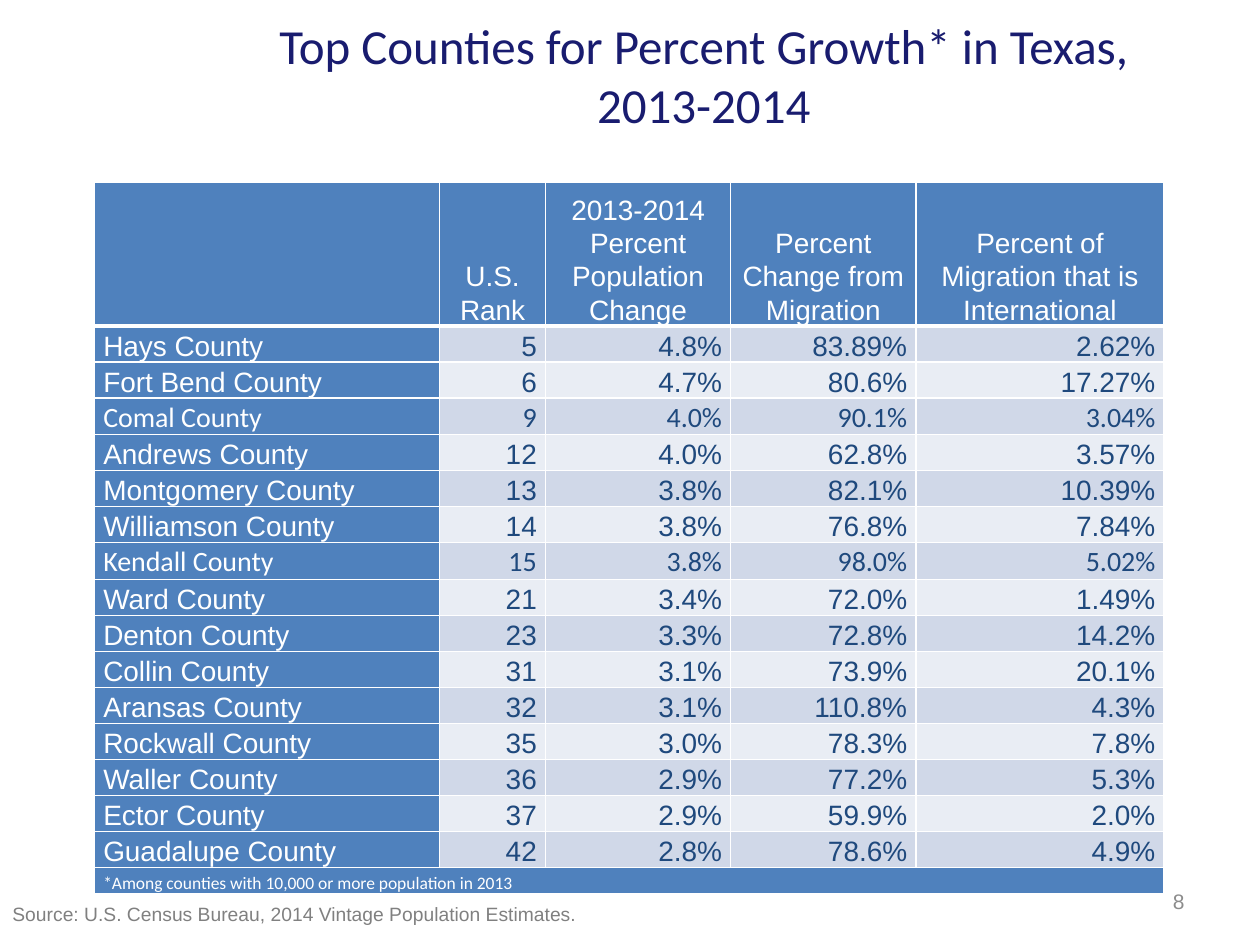
from dataclasses import dataclass

import pptx
import pptx.dml.color
import pptx.enum.text
import pptx.oxml
import pptx.oxml.ns
import pptx.util

Inches = pptx.util.Inches
Pt = pptx.util.Pt
ALIGN = pptx.enum.text.PP_ALIGN
ANCHOR = pptx.enum.text.MSO_ANCHOR

WIDTH, HEIGHT = Inches(10), Inches(7.5)
COLORS = {
    "title": "191C6F",
    "header": "4F81BD",
    "band_dark": "D0D8E8",
    "band_light": "E9EDF4",
    "figure": "1F497D",
    "white": "FFFFFF",
    "number": "8C8C8C",
    "source": "808080",
}


@dataclass(frozen=True)
class Style:
    size: float
    color: str
    font: str = "Arial"
    align: ALIGN = ALIGN.LEFT


@dataclass(frozen=True)
class Caption:
    text: str
    box: tuple[float, float, float, float]  # shares of the slide's size
    style: Style
    anchor: ANCHOR = ANCHOR.TOP
    wrap: bool = True


@dataclass(frozen=True)
class County:
    name: str
    rank: str
    growth: str
    migration: str
    international: str
    font: str = "Arial"


CAPTIONS = [
    Caption("Top Counties for Percent Growth* in Texas, 2013-2014",
            (0.192, 0.01, 0.733, 0.14),
            Style(28, "title", "Calibri", ALIGN.CENTER)),
    Caption("8", (0.717, 0.927, 0.233, 0.053),
            Style(12, "number", align=ALIGN.RIGHT), ANCHOR.MIDDLE),
    Caption("Source: U.S. Census Bureau, 2014 Vintage Population Estimates.",
            (0, 0.948, 0.475, 0.039), Style(11, "source"), wrap=False),
]

HEADINGS = ["", "U.S. Rank", "2013-2014 Percent Population Change",
            "Percent Change from Migration",
            "Percent of Migration that is International"]
COUNTIES = [
    County("Hays County", "5", "4.8%", "83.89%", "2.62%"),
    County("Fort Bend County", "6", "4.7%", "80.6%", "17.27%"),
    County("Comal County", "9", "4.0%", "90.1%", "3.04%", "Calibri"),
    County("Andrews County", "12", "4.0%", "62.8%", "3.57%"),
    County("Montgomery County", "13", "3.8%", "82.1%", "10.39%"),
    County("Williamson County", "14", "3.8%", "76.8%", "7.84%"),
    County("Kendall County", "15", "3.8%", "98.0%", "5.02%", "Calibri"),
    County("Ward County", "21", "3.4%", "72.0%", "1.49%"),
    County("Denton County", "23", "3.3%", "72.8%", "14.2%"),
    County("Collin County", "31", "3.1%", "73.9%", "20.1%"),
    County("Aransas County", "32", "3.1%", "110.8%", "4.3%"),
    County("Rockwall County", "35", "3.0%", "78.3%", "7.8%"),
    County("Waller County", "36", "2.9%", "77.2%", "5.3%"),
    County("Ector County", "37", "2.9%", "59.9%", "2.0%"),
    County("Guadalupe County", "42", "2.8%", "78.6%", "4.9%"),
]
FOOTNOTE = "*Among counties with 10,000 or more population in 2013"

# Table grid in inches; the county rows share the height left over
COLUMN_WIDTHS = [2.74, 0.84, 1.47, 1.47, 1.97]
TABLE_HEIGHT, HEADER_HEIGHT, FOOTNOTE_HEIGHT = 5.64, 1.14, 0.21
COUNTY_HEIGHT = (TABLE_HEIGHT - HEADER_HEIGHT - FOOTNOTE_HEIGHT) / len(COUNTIES)
ROW_HEIGHTS = [HEADER_HEIGHT, *[COUNTY_HEIGHT] * len(COUNTIES), FOOTNOTE_HEIGHT]
CELL_FORMAT = {
    "margin_left": Inches(0.07),
    "margin_right": Inches(0.07),
    "margin_top": 0,
    "margin_bottom": 0,
    "vertical_anchor": ANCHOR.BOTTOM,
}


def rgb(name: str) -> pptx.dml.color.RGBColor:
    return pptx.dml.color.RGBColor.from_string(COLORS[name])


def write(frame, text: str, style: Style) -> None:
    paragraph = frame.paragraphs[0]
    paragraph.alignment = style.align
    run = paragraph.add_run()
    run.text = text
    for key, value in {"size": Pt(style.size), "name": style.font}.items():
        setattr(run.font, key, value)
    run.font.color.rgb = rgb(style.color)


def add_caption(slide, caption: Caption) -> None:
    left, top, width, height = caption.box
    frame = slide.shapes.add_textbox(
        int(left * WIDTH), int(top * HEIGHT),
        int(width * WIDTH), int(height * HEIGHT)).text_frame
    frame.word_wrap = caption.wrap
    frame.vertical_anchor = caption.anchor
    write(frame, caption.text, caption.style)


def set_borders(cell, top: float = 1, bottom: float = 1) -> None:
    properties = cell._tc.get_or_add_tcPr()
    for side, points in {"L": 1, "R": 1, "T": top, "B": bottom}.items():
        properties.append(pptx.oxml.parse_xml(
            f'<a:ln{side} {pptx.oxml.ns.nsdecls("a")} w="{Pt(points)}">'
            f'<a:solidFill><a:srgbClr val="{COLORS["white"]}"/></a:solidFill>'
            f'</a:ln{side}>'))


def fill_cell(cell, text: str, style: Style, fill: str,
              top: float = 1, bottom: float = 1) -> None:
    for key, value in CELL_FORMAT.items():
        setattr(cell, key, value)
    set_borders(cell, top, bottom)
    cell.fill.solid()
    cell.fill.fore_color.rgb = rgb(fill)
    if text:
        write(cell.text_frame, text, style)
        cell.text_frame.paragraphs[0].line_spacing = 1.07


def add_county_table(slide) -> None:
    table = slide.shapes.add_table(
        len(ROW_HEIGHTS), len(COLUMN_WIDTHS), int(0.075 * WIDTH),
        int(0.193 * HEIGHT), Inches(sum(COLUMN_WIDTHS)),
        Inches(TABLE_HEIGHT)).table
    for column, width in zip(table.columns, COLUMN_WIDTHS):
        column.width = Inches(width)
    for row, height in zip(table.rows, ROW_HEIGHTS):
        row.height = Inches(height)

    # Header row
    for column, heading in enumerate(HEADINGS):
        fill_cell(table.cell(0, column), heading,
                  Style(16, "white", align=ALIGN.CENTER), "header", bottom=3)

    # One banded row per county
    for row, county in enumerate(COUNTIES, start=1):
        top = 3 if row == 1 else 1
        band = "band_dark" if row % 2 else "band_light"
        fill_cell(table.cell(row, 0), county.name,
                  Style(16, "white", county.font), "header", top)
        figures = (county.rank, county.growth, county.migration,
                   county.international)
        for column, figure in enumerate(figures, start=1):
            fill_cell(table.cell(row, column), figure,
                      Style(16, "figure", county.font, ALIGN.RIGHT), band, top)

    # Footnote across the full width
    last = len(ROW_HEIGHTS) - 1
    footnote = table.cell(last, 0)
    footnote.merge(table.cell(last, len(COLUMN_WIDTHS) - 1))
    fill_cell(footnote, FOOTNOTE, Style(10, "white", "Calibri"), "header")


def main() -> None:
    deck = pptx.Presentation()
    deck.slide_width, deck.slide_height = WIDTH, HEIGHT
    slide = deck.slides.add_slide(deck.slide_layouts[6])
    add_county_table(slide)
    for caption in CAPTIONS:
        add_caption(slide, caption)
    deck.save("out.pptx")


if __name__ == "__main__":
    main()
